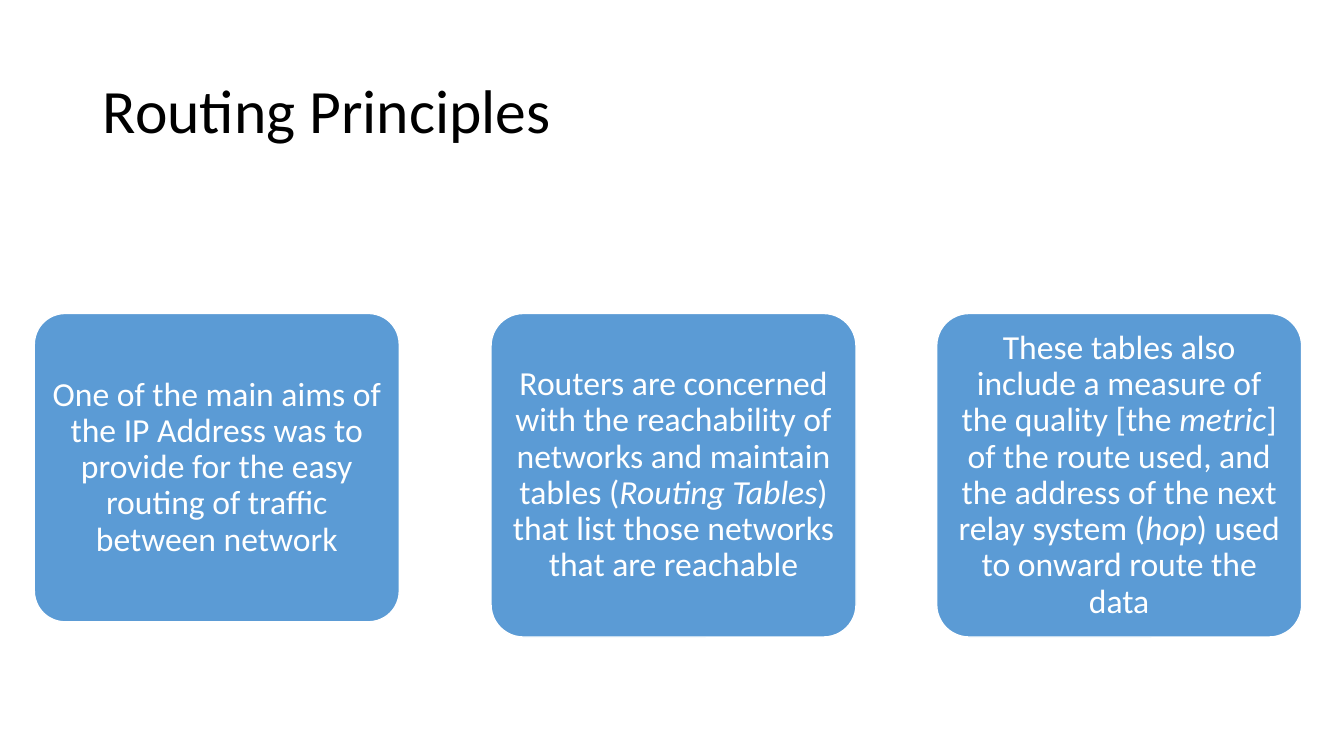
from pptx import Presentation
from pptx.dml.color import RGBColor
from pptx.enum.shapes import MSO_SHAPE
from pptx.enum.text import MSO_ANCHOR, PP_ALIGN
from pptx.util import Inches, Pt

ROUNDED = MSO_SHAPE.ROUNDED_RECTANGLE
MIDDLE = MSO_ANCHOR.MIDDLE
LEFT, CENTER = PP_ALIGN.LEFT, PP_ALIGN.CENTER

BLACK = RGBColor(0x00, 0x00, 0x00)
WHITE = RGBColor(0xFF, 0xFF, 0xFF)
BLUE = RGBColor(0x5B, 0x9B, 0xD5)
FONT = "Calibri"
LINE_SPACING = 0.9

TITLE = "Routing Principles"
TITLE_BOX = (0.92, 0.4, 11.5, 1.45)

# Each card: left, height, and its text as (words, italic) runs
CARDS = [
    (0.34, 3.06, [
        ("One of the main aims of the IP Address was to provide for the "
         "easy routing of traffic between network", False),
    ]),
    (4.87, 3.21, [
        ("Routers are concerned with the reachability of networks and "
         "maintain tables (", False),
        ("Routing Tables", True),
        (") that list those networks that are reachable", False),
    ]),
    (9.29, 3.21, [
        ("These tables also include a measure of the quality [the ", False),
        ("metric", True),
        ("] of the route used, and the address of the next relay system (",
         False),
        ("hop", True),
        (") used to onward route the data", False),
    ]),
]
CARD_TOP, CARD_WIDTH = 3.11, 3.62
CARD_CORNER = 0.1
INSET_X, INSET_Y = Inches(0.05), Inches(0.03)


def format_paragraph(p, size, color, align):
    p.alignment = align
    p.line_spacing = LINE_SPACING
    p.font.name = FONT
    p.font.size = Pt(size)
    p.font.color.rgb = color


def add_title(slide):
    title = slide.shapes.title
    title.left, title.top, title.width, title.height = map(Inches, TITLE_BOX)
    tf = title.text_frame
    tf.text = TITLE
    tf.vertical_anchor = MIDDLE
    format_paragraph(tf.paragraphs[0], 44, BLACK, LEFT)


def add_card(slide, left, height, runs):
    box = map(Inches, (left, CARD_TOP, CARD_WIDTH, height))
    sp = slide.shapes.add_shape(ROUNDED, *box)
    sp.adjustments[0] = CARD_CORNER
    sp.shadow.inherit = False
    sp.fill.solid()
    sp.fill.fore_color.rgb = BLUE
    sp.line.color.rgb = WHITE
    sp.line.width = Pt(1)

    tf = sp.text_frame
    tf.word_wrap = True
    tf.vertical_anchor = MIDDLE
    tf.margin_left = tf.margin_right = INSET_X
    tf.margin_top = tf.margin_bottom = INSET_Y
    p = tf.paragraphs[0]
    format_paragraph(p, 24, WHITE, CENTER)
    for words, italic in runs:
        r = p.add_run()
        r.text = words
        if italic:
            r.font.italic = True


def main():
    prs = Presentation()
    prs.slide_width, prs.slide_height = Inches(13.33), Inches(7.5)
    title_only = prs.slide_layouts[5]
    slide = prs.slides.add_slide(title_only)
    add_title(slide)
    for card in CARDS:
        add_card(slide, *card)
    prs.save("out.pptx")


if __name__ == "__main__":
    main()
